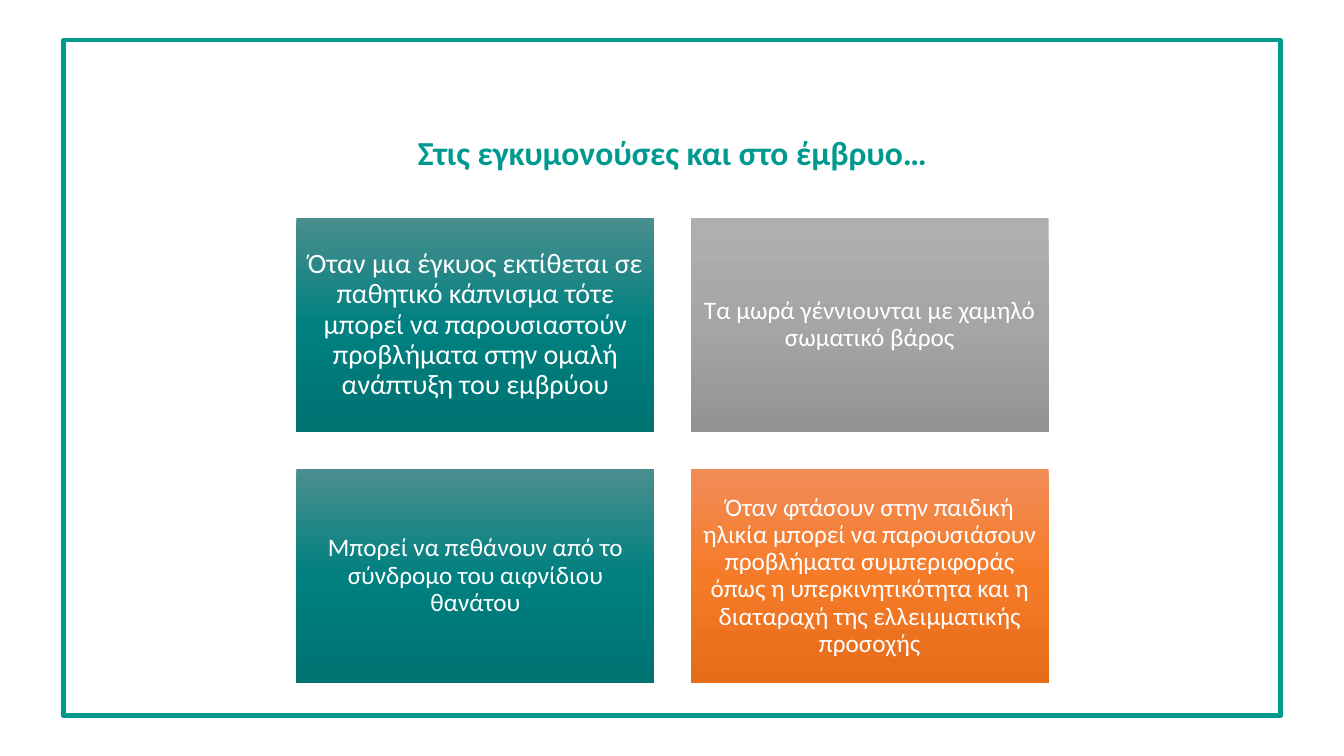
from copy import deepcopy

from pptx import Presentation
from pptx.dml.color import RGBColor
from pptx.enum import shapes, text
from pptx.oxml.ns import qn
from pptx.util import Inches, Pt

WHITE = RGBColor(0xFF, 0xFF, 0xFF)
GREEN = RGBColor(0x00, 0x99, 0x90)
TEAL_STOPS = (RGBColor(0x4B, 0x8E, 0x8E), RGBColor(0x00, 0x80, 0x80), RGBColor(0x00, 0x72, 0x72))
GRAY_STOPS = (RGBColor(0xAF, 0xAF, 0xAF), RGBColor(0xA5, 0xA5, 0xA5), RGBColor(0x93, 0x93, 0x93))
ORANGE_STOPS = (RGBColor(0xF1, 0x8C, 0x57), RGBColor(0xF6, 0x7B, 0x28), RGBColor(0xE5, 0x6C, 0x19))

CARD_LEFT, CARD_TOP = 2.94, 2.16
CARD_WIDTH, CARD_HEIGHT = 3.55, 2.13
CARD_GAP = 0.36
CARDS = [
    ("Όταν μια έγκυος εκτίθεται σε παθητικό κάπνισμα τότε μπορεί να παρουσιαστούν "
     "προβλήματα στην ομαλή ανάπτυξη του εμβρύου", TEAL_STOPS, 20, 0.08),
    ("Τα μωρά γέννιουνται με χαμηλό σωματικό βάρος", GRAY_STOPS, 18, 0.07),
    ("Μπορεί να πεθάνουν από το σύνδρομο του αιφνίδιου θανάτου", TEAL_STOPS, 18, 0.07),
    ("Όταν φτάσουν στην παιδική ηλικία μπορεί να παρουσιάσουν προβλήματα συμπεριφοράς "
     "όπως η υπερκινητικότητα και η διαταραχή της ελλειμματικής προσοχής",
     ORANGE_STOPS, 18, 0.07),
]


def write_text(sp, words, size=18, color=WHITE, bold=False, inset=0.07):
    """Put one centred paragraph in a shape."""
    tf = sp.text_frame
    tf.word_wrap = True
    tf.vertical_anchor = text.MSO_ANCHOR.MIDDLE
    tf.margin_left = tf.margin_right = tf.margin_top = tf.margin_bottom = Inches(inset)
    p = tf.paragraphs[0]
    p.alignment = text.PP_ALIGN.CENTER
    p.line_spacing = 0.9
    r = p.add_run()
    r.text = words
    r.font.name = "Calibri"
    r.font.size = Pt(size)
    r.font.bold = bold
    r.font.color.rgb = color


def add_rect(slide, left, top, width, height):
    """Add a rectangle without a shadow."""
    sp = slide.shapes.add_shape(shapes.MSO_SHAPE.RECTANGLE, Inches(left), Inches(top),
                                Inches(width), Inches(height))
    sp.shadow.inherit = False
    return sp


def add_frame(slide):
    """Add the outlined border of the slide."""
    sp = add_rect(slide, 0.63, 0.4, 12.07, 6.7)
    sp.fill.solid()
    sp.fill.fore_color.rgb = WHITE
    sp.line.color.rgb = GREEN
    sp.line.width = Pt(3)


def add_title(slide, words):
    """Add the slide heading."""
    sp = slide.shapes.add_textbox(Inches(0.92), Inches(1.29), Inches(11.5), Inches(0.48))
    write_text(sp, words, size=24, color=GREEN, bold=True, inset=0.05)


def fill_gradient(sp, colors):
    """Fill a shape from top to bottom with evenly spaced colours."""
    sp.fill.gradient()
    sp.fill.gradient_angle = 270
    stops = sp._element.spPr.find(".//" + qn("a:gsLst"))
    while len(stops) < len(colors):
        stops.append(deepcopy(stops[-1]))
    for i, (stop, color) in enumerate(zip(sp.fill.gradient_stops, colors)):
        stop.color.rgb = color
        stop.position = i / (len(colors) - 1)


def add_card(slide, index, words, colors, size, inset):
    """Add one card at its place in the two-column grid."""
    row, col = divmod(index, 2)
    sp = add_rect(slide, CARD_LEFT + col * (CARD_WIDTH + CARD_GAP),
                  CARD_TOP + row * (CARD_HEIGHT + CARD_GAP), CARD_WIDTH, CARD_HEIGHT)
    fill_gradient(sp, colors)
    sp.line.fill.background()
    write_text(sp, words, size=size, inset=inset)


def main():
    """Build and save the slide."""
    prs = Presentation()
    prs.slide_width, prs.slide_height = Inches(13.33), Inches(7.5)
    slide = prs.slides.add_slide(prs.slide_layouts[6])
    add_frame(slide)
    add_title(slide, "Στις εγκυμονούσες και στο έμβρυο…")
    for i, card in enumerate(CARDS):
        add_card(slide, i, *card)
    prs.save("out.pptx")


if __name__ == "__main__":
    main()
